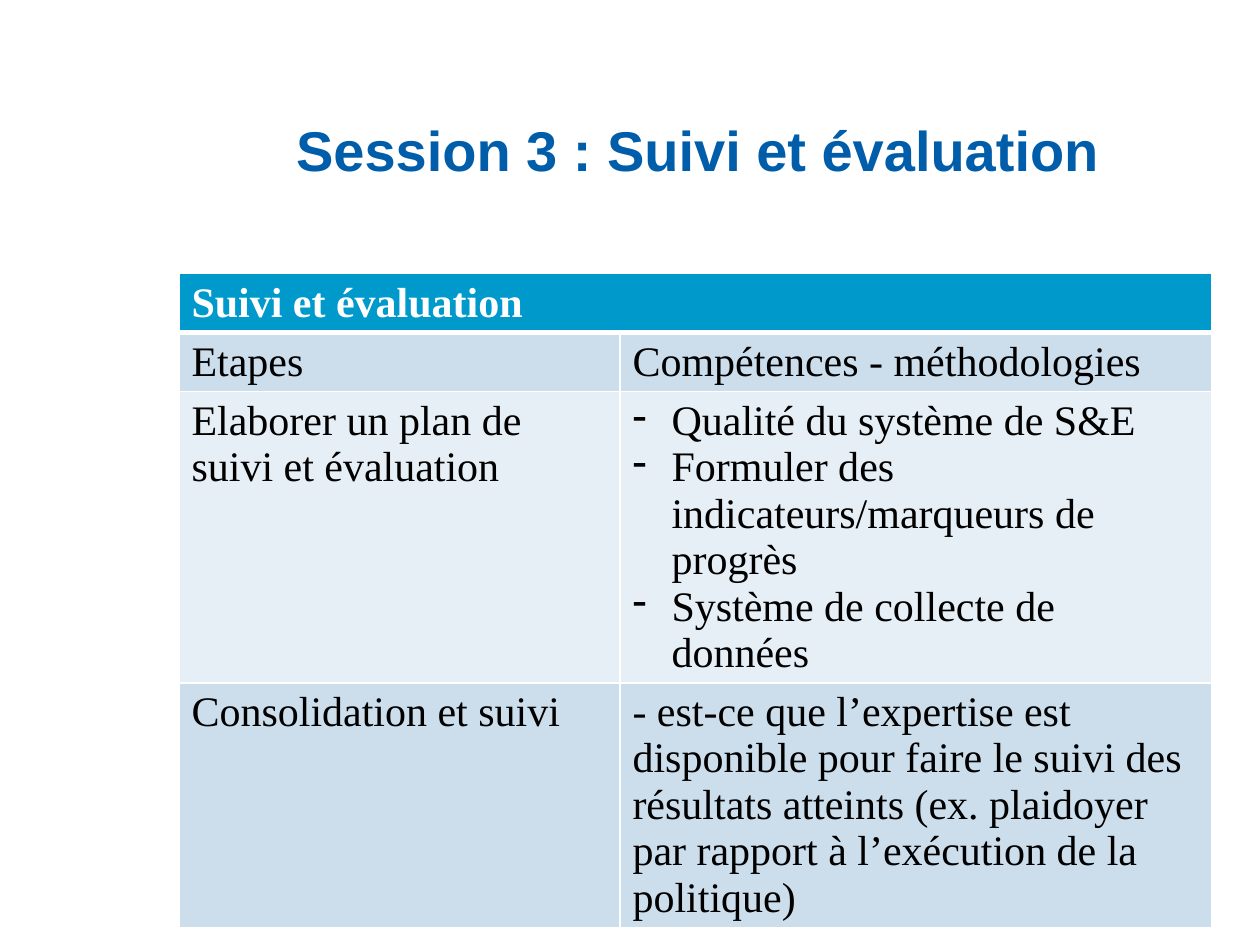
from dataclasses import dataclass

from lxml.etree import SubElement
from pptx import Presentation
from pptx.dml.color import RGBColor as Color
from pptx.enum.text import MSO_ANCHOR as Anchor, MSO_AUTO_SIZE as AutoSize, PP_ALIGN as Align
from pptx.oxml.ns import qn
from pptx.util import Inches, Pt


@dataclass(frozen=True)
class Theme:
    title_font: str = "Arial"
    title_size: int = 32
    title_color: str = "005DAA"
    table_font: str = "Times New Roman"
    table_size: int = 24
    text_color: str = "000000"
    header_text: str = "FFFFFF"
    header_fill: str = "0099CC"
    band_fills: tuple = ("CCDEEC", "E7EFF6")
    border_color: str = "FFFFFF"
    thin_border: int = 1
    thick_border: int = 3
    bullet_indent: float = 0.31


class SlideBuilder:
    def __init__(self, presentation, theme):
        self.theme = theme
        self.slide = presentation.slides.add_slide(presentation.slide_layouts[5])

    def style_runs(self, paragraph, font, size, color, bold):
        for run in paragraph.runs:
            run.font.name = font
            run.font.size = Pt(size)
            run.font.bold = bold
            run.font.color.rgb = Color.from_string(color)

    def add_title(self, text, left, top, width, height):
        title = self.slide.shapes.title
        title.left, title.top = Inches(left), Inches(top)
        title.width, title.height = Inches(width), Inches(height)
        frame = title.text_frame
        frame.text = text
        frame.word_wrap = True
        frame.auto_size = AutoSize.NONE
        frame.vertical_anchor = Anchor.BOTTOM
        paragraph = frame.paragraphs[0]
        paragraph.alignment = Align.LEFT
        theme = self.theme
        self.style_runs(paragraph, theme.title_font, theme.title_size, theme.title_color, True)

    def add_table(self, rows, left, top, column_widths, row_height):
        """Build a table with a full-width header; a list in a cell becomes bullets."""
        theme = self.theme
        frame = self.slide.shapes.add_table(
            len(rows), len(column_widths), Inches(left), Inches(top),
            Inches(sum(column_widths)), Inches(row_height * len(rows)))
        table = frame.table
        for column, width in zip(table.columns, column_widths):
            column.width = Inches(width)
        table.cell(0, 0).merge(table.cell(0, len(column_widths) - 1))

        for row_index, row in enumerate(rows):
            table.rows[row_index].height = Inches(row_height)
            is_header = row_index == 0
            fill = theme.header_fill if is_header else theme.band_fills[(row_index - 1) % 2]
            color = theme.header_text if is_header else theme.text_color
            for column_index in range(len(column_widths)):
                cell = table.cell(row_index, column_index)
                self.set_borders(cell, row_index)
                cell.fill.solid()
                cell.fill.fore_color.rgb = Color.from_string(fill)
                if column_index < len(row):
                    self.fill_cell(cell, row[column_index], color, is_header)

    def fill_cell(self, cell, content, color, bold):
        bulleted = isinstance(content, list)
        cell.text_frame.text = "\n".join(content) if bulleted else content
        for paragraph in cell.text_frame.paragraphs:
            if bulleted:
                self.add_bullet(paragraph)
            self.style_runs(paragraph, self.theme.table_font, self.theme.table_size, color, bold)

    def add_bullet(self, paragraph):
        properties = paragraph._p.get_or_add_pPr()
        indent = Inches(self.theme.bullet_indent)
        properties.set("marL", str(indent))
        properties.set("indent", str(-indent))
        SubElement(properties, qn("a:buChar")).set("char", "-")

    def set_borders(self, cell, row_index):
        theme = self.theme
        # The line under the header is shared by the first two rows
        thick_sides = {0: "lnB", 1: "lnT"}
        properties = cell._tc.get_or_add_tcPr()
        for side in ("lnL", "lnR", "lnT", "lnB"):
            thick = thick_sides.get(row_index) == side
            line = SubElement(properties, qn(f"a:{side}"))
            line.set("w", str(Pt(theme.thick_border if thick else theme.thin_border)))
            solid = SubElement(line, qn("a:solidFill"))
            SubElement(solid, qn("a:srgbClr")).set("val", theme.border_color)


def main():
    presentation = Presentation()
    presentation.slide_width, presentation.slide_height = Inches(10), Inches(7.5)
    builder = SlideBuilder(presentation, Theme())

    # Title
    builder.add_title("Session 3 : Suivi et évaluation", 2.25, 0.75, 7.5, 0.75)

    # Steps and the skills they call for
    rows = [
        ["Suivi et évaluation"],
        ["Etapes", "Compétences - méthodologies"],
        ["Elaborer un plan de suivi et évaluation",
         ["Qualité du système de S&E",
          "Formuler des indicateurs/marqueurs de progrès",
          "Système de collecte de données"]],
        ["Consolidation et suivi",
         "- est-ce que l’expertise est disponible pour faire le suivi des résultats "
         "atteints (ex. plaidoyer par rapport à l’exécution de la politique)"],
    ]
    builder.add_table(rows, left=1.42, top=2.17, column_widths=(3.5, 4.7), row_height=0.41)

    presentation.save("out.pptx")


if __name__ == "__main__":
    main()
